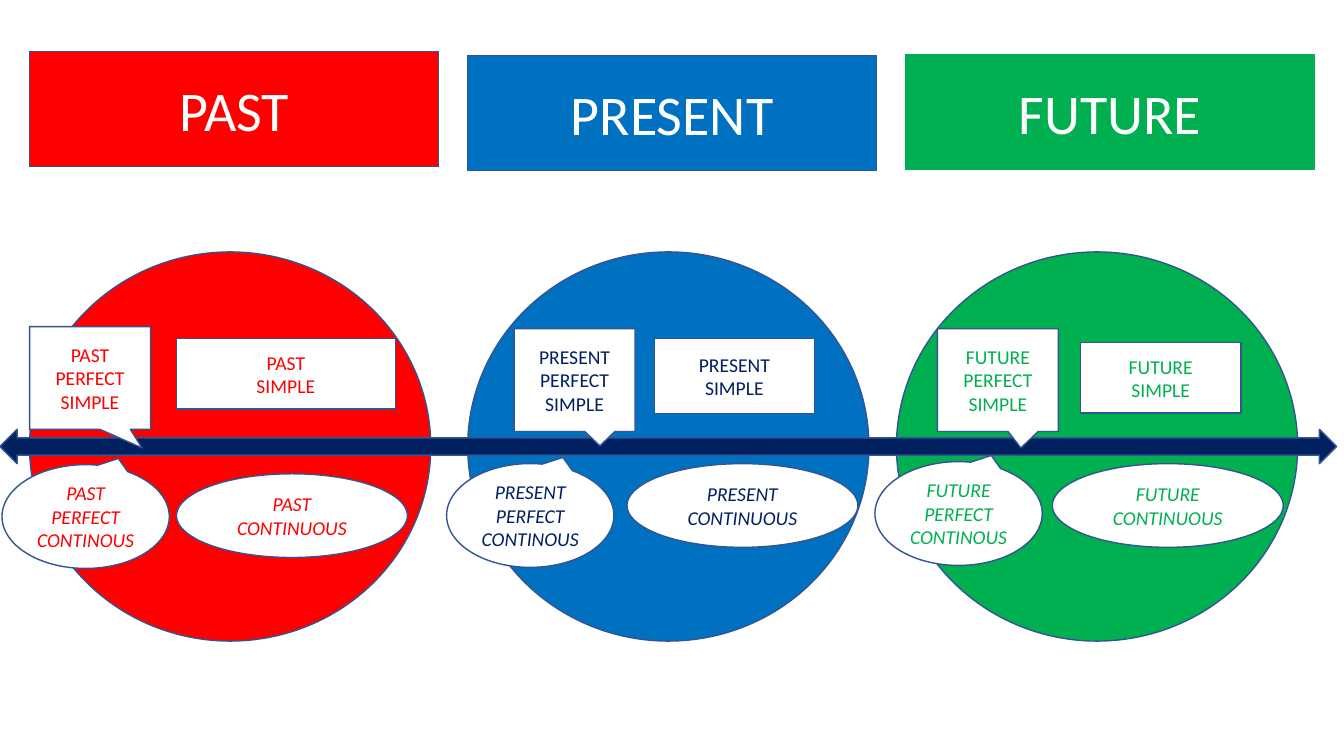
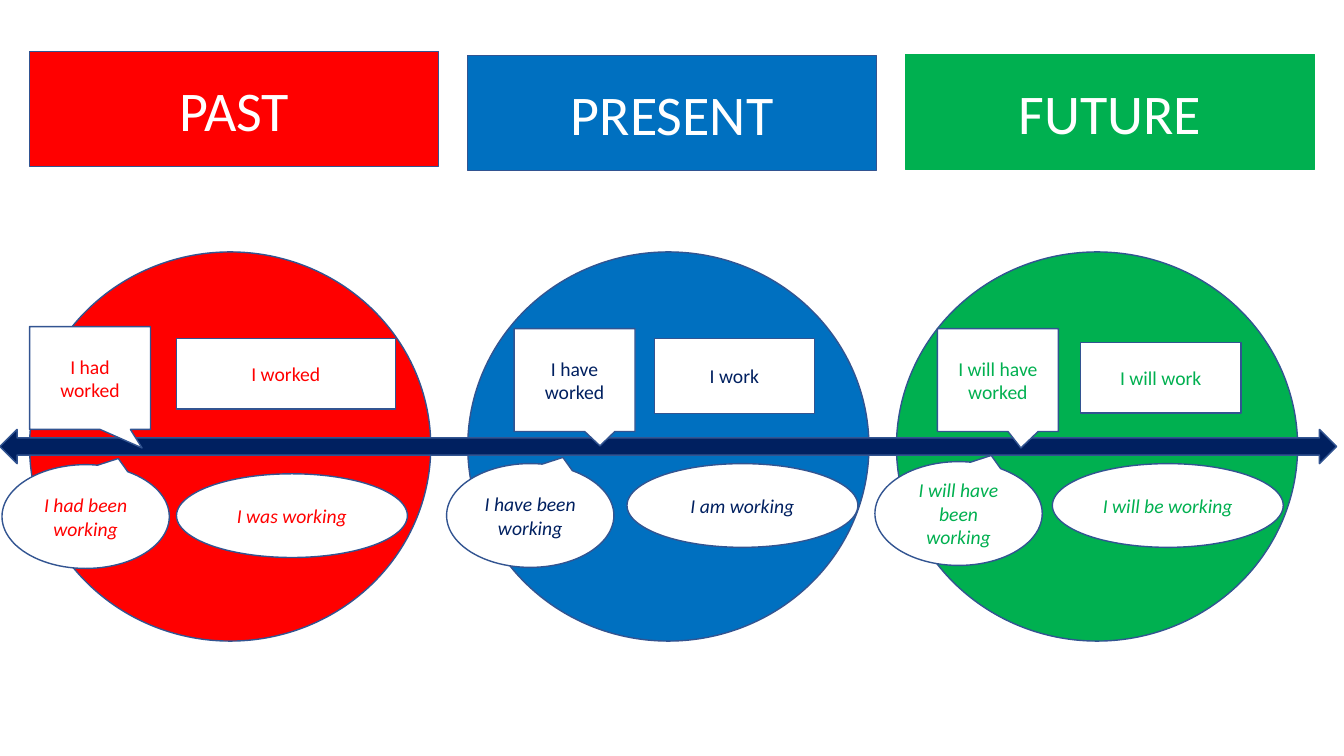
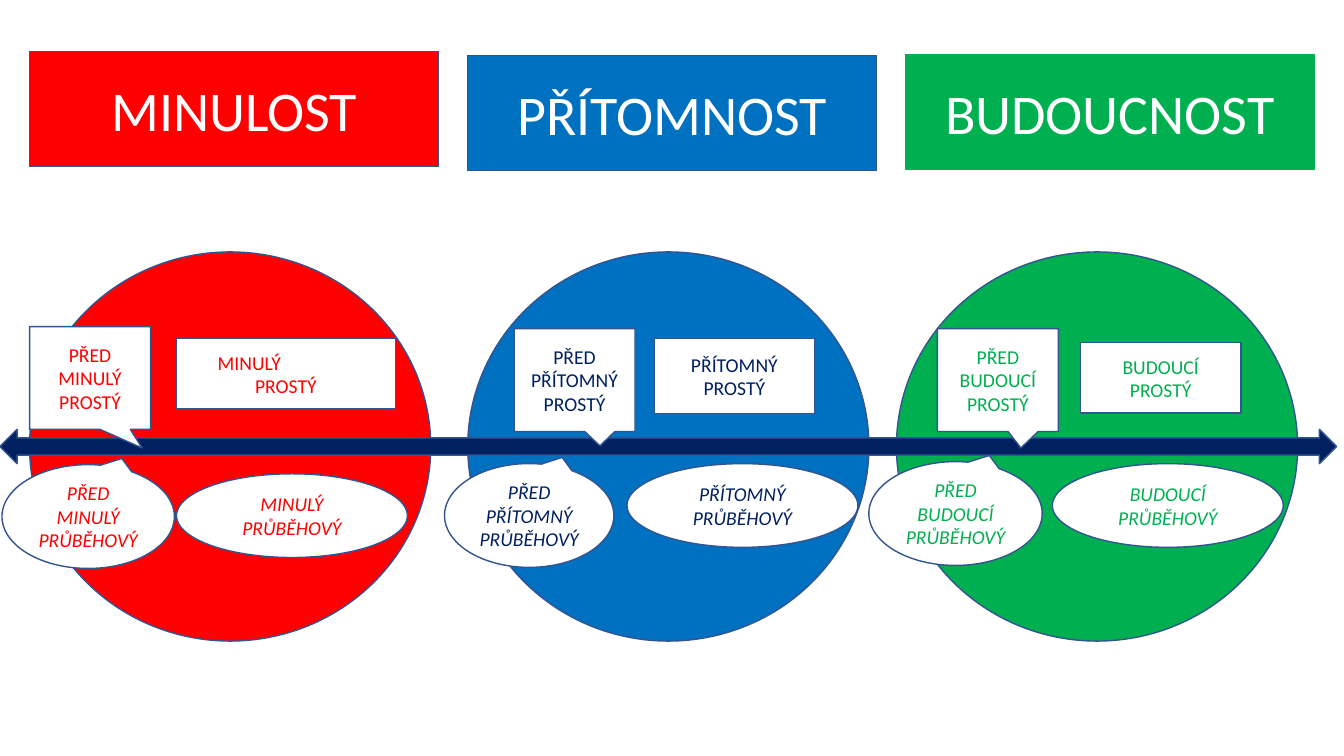
from pptx import Presentation
from pptx.dml.color import RGBColor
from pptx.enum.shapes import MSO_SHAPE
from pptx.enum.text import MSO_ANCHOR, PP_ALIGN
from pptx.util import Inches, Pt

W, H = Inches(13.33), Inches(7.5)
FONT = "Calibri"
COLORS = {
    "past": "FF0000", "present": "0070C0", "future": "00B050",
    "navy": "002060", "outline": "325491", "white": "FFFFFF",
}
TENSES = ("past", "present", "future")
INKS = ("past", "navy", "future")

# Layout in percent of the slide's width (x, w) and height (y, h)
CIRCLE_X = (2.2, 34.8, 66.7)
HEADER_X, HEADER_STEP = 2.2, 32.58
HEADER_Y = (6.8, 7.33, 7.2)
SIMPLE = ((13.13, 44.8, 16.28, 9.33), (48.68, 44.8, 11.93, 9.87),
          (80.4, 45.33, 11.93, 9.33))
CONTINUOUS = ((13.13, 62.67), (46.65, 61.33), (78.3, 61.33))
PERFECT = ((2.2, 43.2), (38.25, 43.47), (69.75, 43.47))
PERFECT_TIPS = ((0.43, 0.68), (0.21, 0.64), (0.19, 0.66))
PERFECT_CONT = ((0.15, 61.47), (33.23, 61.33), (65.1, 61.07))
PERFECT_CONT_TIP = (0.195, -0.56)

# Wording of each slide: one entry per tense, a line break starts a paragraph
SLIDES = (
    {
        "headers": ("PAST", "PRESENT", "FUTURE"),
        "simple": ("PAST\nSIMPLE", "PRESENT\nSIMPLE", "FUTURE\nSIMPLE"),
        "continuous": ("PAST CONTINUOUS", "PRESENT CONTINUOUS",
                       "FUTURE CONTINUOUS"),
        "perfect": ("PAST PERFECT SIMPLE", "PRESENT PERFECT SIMPLE",
                    "FUTURE PERFECT SIMPLE"),
        "perfect_cont": ("PAST\nPERFECT CONTINOUS",
                         "PRESENT\nPERFECT CONTINOUS",
                         "FUTURE\nPERFECT CONTINOUS"),
    },
    {
        "headers": ("PAST", "PRESENT", "FUTURE"),
        "simple": ("I worked", "I work", "I will work"),
        "continuous": ("I was working", "I am working", "I will be working"),
        "perfect": ("I had worked", "I have worked", "I will have worked"),
        "perfect_cont": ("I had been working", "I have been working",
                         "I will have been working"),
    },
    {
        "headers": ("MINULOST", "PŘÍTOMNOST", "BUDOUCNOST"),
        "simple": ("MINULÝ\nPROSTÝ", "PŘÍTOMNÝ PROSTÝ", "BUDOUCÍ PROSTÝ"),
        "simple_indents": (2.33, 0, 0),
        "continuous": ("MINULÝ PRŮBĚHOVÝ", "PŘÍTOMNÝ PRŮBĚHOVÝ",
                       "BUDOUCÍ PRŮBĚHOVÝ"),
        "perfect": ("PŘED MINULÝ PROSTÝ", "PŘED PŘÍTOMNÝ PROSTÝ",
                    "PŘED BUDOUCÍ PROSTÝ"),
        "perfect_cont": ("PŘED MINULÝ PRŮBĚHOVÝ", "PŘED PŘÍTOMNÝ PRŮBĚHOVÝ",
                         "PŘED BUDOUCÍ PRŮBĚHOVÝ"),
        "extra_widths": (0.38, 0.15, 0.45),
    },
)


def rgb(name):
    return RGBColor.from_string(COLORS[name])


def px(share):
    return round(W * share / 100)


def py(share):
    return round(H * share / 100)


def write(sp, text, size=14, color="white", italic=False, indent=0):
    """Centre the text; an indent sets the first paragraph flush left."""
    tf = sp.text_frame
    tf.word_wrap = True
    tf.vertical_anchor = MSO_ANCHOR.MIDDLE
    for i, line in enumerate(text.split("\n")):
        p = tf.add_paragraph() if i else tf.paragraphs[0]
        p.alignment = PP_ALIGN.CENTER
        if indent and i == 0:
            p.alignment = PP_ALIGN.LEFT
            p._p.get_or_add_pPr().set("marL", str(px(indent)))
        r = p.add_run()
        r.text = line
        r.font.name, r.font.size, r.font.italic = FONT, Pt(size), italic
        r.font.color.rgb = rgb(color)


def add_box(slide, kind, x, y, w, h, fill="white", line="outline", tip=None):
    sp = slide.shapes.add_shape(kind, px(x), py(y), px(w), py(h))
    sp.shadow.inherit = False
    sp.fill.solid()
    sp.fill.fore_color.rgb = rgb(fill)
    sp.line.color.rgb = rgb(line)
    sp.line.width = Pt(1)
    if tip:
        sp.adjustments[0], sp.adjustments[1] = tip
    return sp


def add_backdrop(slide, headers):
    """Circles, header bands and the time arrow."""
    for x, tense in zip(CIRCLE_X, TENSES):
        add_box(slide, MSO_SHAPE.FLOWCHART_CONNECTOR, x, 33.33, 29.85, 51.47,
                fill=tense)
    for i, (text, tense) in enumerate(zip(headers, TENSES)):
        line = "future" if tense == "future" else "outline"
        sp = add_box(slide, MSO_SHAPE.RECTANGLE, HEADER_X + i * HEADER_STEP,
                     HEADER_Y[i], 30.45, 15.2, fill=tense, line=line)
        write(sp, text, size=40)
    add_box(slide, MSO_SHAPE.LEFT_RIGHT_ARROW, 0, 56.8, 99.45, 4.53,
            fill="navy")


def add_tense(slide, i, words):
    """The four labels of one tense."""
    ink = INKS[i]
    sp = add_box(slide, MSO_SHAPE.RECTANGLE, *SIMPLE[i])
    write(sp, words["simple"][i], color=ink,
          indent=words.get("simple_indents", (0, 0, 0))[i])

    sp = add_box(slide, MSO_SHAPE.OVAL, *CONTINUOUS[i], 17.18, 11.07)
    write(sp, words["continuous"][i], color=ink, italic=True)

    sp = add_box(slide, MSO_SHAPE.RECTANGULAR_CALLOUT, *PERFECT[i], 9, 13.6,
                 tip=PERFECT_TIPS[i])
    write(sp, words["perfect"][i], color=ink)

    # Wider bubbles grow to the left, except the first, at the slide's edge
    extra = words.get("extra_widths", (0, 0, 0))[i]
    x, y = PERFECT_CONT[i]
    sp = add_box(slide, MSO_SHAPE.OVAL_CALLOUT, x - extra if i else x, y,
                 12.45 + extra, 13.73, tip=PERFECT_CONT_TIP)
    write(sp, words["perfect_cont"][i], color=ink, italic=True)


def main():
    prs = Presentation()
    prs.slide_width, prs.slide_height = W, H
    for words in SLIDES:
        slide = prs.slides.add_slide(prs.slide_layouts[6])
        add_backdrop(slide, words["headers"])
        for i in range(len(TENSES)):
            add_tense(slide, i, words)
    prs.save("out.pptx")


if __name__ == "__main__":
    main()
